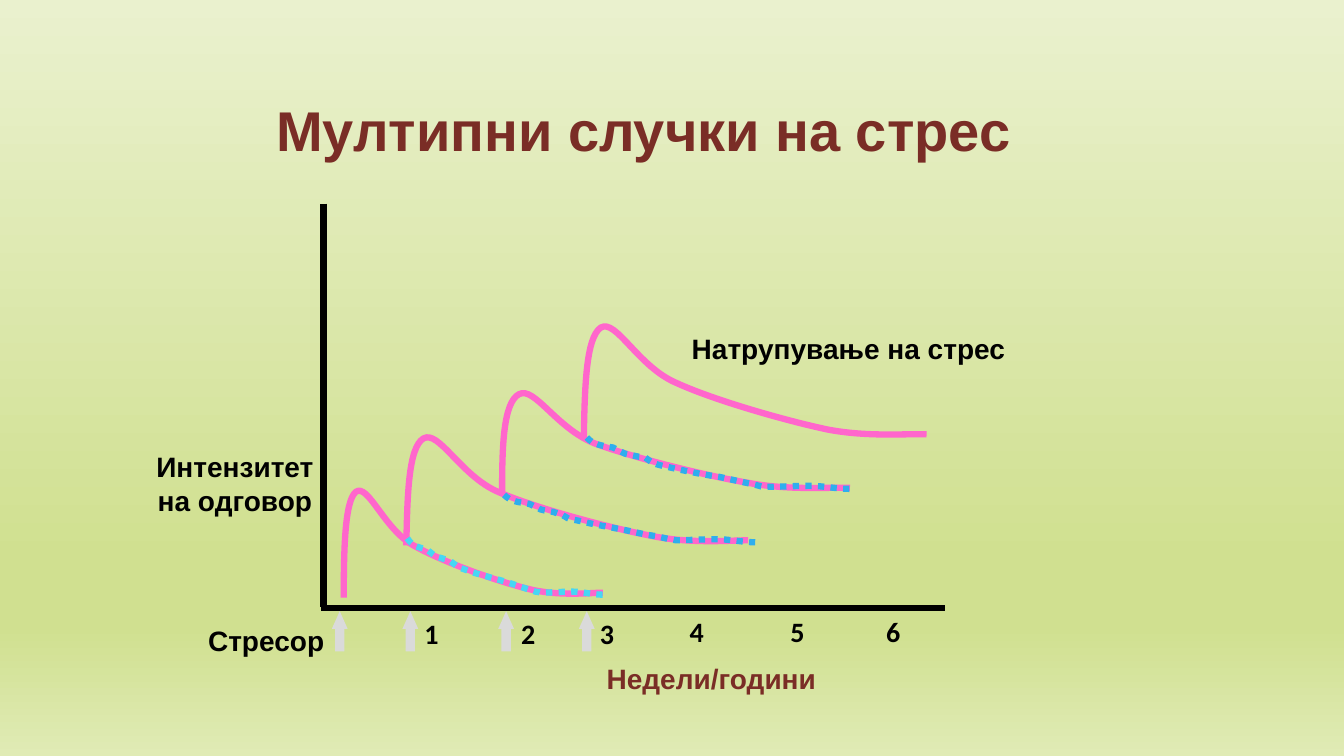
import pptx
import pptx.util
import pptx.dml.color
import pptx.enum.dml
import pptx.enum.shapes
import pptx.enum.text
import pptx.oxml.ns
from lxml import etree

Inches = pptx.util.Inches
qn = pptx.oxml.ns.qn
ALIGN = pptx.enum.text.PP_ALIGN
HUES = {
    "ink": "000000", "brown": "7A2D26", "pink": "FF66CC",
    "cyan": "46D7F4", "blue": "2EAEEE", "green": "03FB61", "gray": "DADADA",
}
SKY = [(0, "EAF1CE"), (74, "D0E090"), (83, "D0E090"), (100, "E0EBB5")]

# Each curve: start point, then two controls and an end for every arc.
WAVES = [
    [(3.41, 5.93), (3.41, 5.45), (3.42, 4.97), (3.53, 4.88),
     (3.65, 4.79), (3.81, 5.25), (4.1, 5.41), (4.38, 5.57), (4.91, 5.76),
     (5.23, 5.84), (5.54, 5.92), (5.86, 5.88), (5.98, 5.88)],
    [(4.03, 5.41), (4.04, 4.92), (4.05, 4.44), (4.2, 4.35),
     (4.35, 4.26), (4.57, 4.72), (4.94, 4.88), (5.31, 5.04), (6.02, 5.23),
     (6.43, 5.31), (6.84, 5.4), (7.25, 5.36), (7.42, 5.36)],
    [(4.98, 4.88), (4.98, 4.44), (4.99, 3.99), (5.15, 3.91),
     (5.3, 3.83), (5.52, 4.25), (5.9, 4.4), (6.28, 4.54), (7, 4.72),
     (7.42, 4.79), (7.84, 4.87), (8.27, 4.83), (8.43, 4.84)],
    [(5.79, 4.36), (5.8, 3.85), (5.81, 3.35), (5.96, 3.25),
     (6.11, 3.16), (6.33, 3.64), (6.71, 3.8), (7.08, 3.97), (7.78, 4.17),
     (8.2, 4.26), (8.61, 4.34), (9.02, 4.3), (9.19, 4.31)],
]
TAILS = [
    ("cyan", [
        (4.04, 5.34), (4.09, 5.42), (4.15, 5.43), (4.23, 5.45),
        (4.35, 5.54), (4.29, 5.51), (4.42, 5.55), (4.44, 5.56), (4.47, 5.57),
        (4.47, 5.57), (4.5, 5.59), (4.52, 5.61), (4.55, 5.63), (4.55, 5.63),
        (4.67, 5.67), (4.69, 5.68), (4.8, 5.71), (4.9, 5.74), (5.01, 5.77),
        (5.08, 5.79), (5.15, 5.82), (5.22, 5.84), (5.25, 5.85), (5.28, 5.86),
        (5.31, 5.87), (5.33, 5.87), (5.36, 5.88), (5.36, 5.88), (5.47, 5.88),
        (5.57, 5.87), (5.68, 5.87), (5.78, 5.87), (5.87, 5.9), (5.98, 5.9)]),
    ("blue", [
        (5, 4.91), (5.07, 4.98), (5.14, 4.98), (5.25, 5),
        (5.4, 5.07), (5.32, 5.05), (5.49, 5.08), (5.51, 5.09), (5.55, 5.1),
        (5.55, 5.1), (5.59, 5.11), (5.62, 5.14), (5.65, 5.15), (5.66, 5.15),
        (5.81, 5.18), (5.84, 5.19), (5.98, 5.22), (6.11, 5.24), (6.25, 5.27),
        (6.34, 5.29), (6.43, 5.31), (6.51, 5.32), (6.55, 5.33), (6.6, 5.34),
        (6.64, 5.35), (6.66, 5.35), (6.7, 5.36), (6.7, 5.36), (6.83, 5.36),
        (6.97, 5.35), (7.11, 5.35), (7.24, 5.35), (7.36, 5.38), (7.49, 5.38)]),
    ("blue", [
        (5.82, 4.34), (5.88, 4.41), (5.96, 4.42), (6.08, 4.44),
        (6.24, 4.52), (6.15, 4.49), (6.33, 4.53), (6.35, 4.53), (6.4, 4.54),
        (6.4, 4.54), (6.43, 4.56), (6.46, 4.59), (6.5, 4.6), (6.51, 4.61),
        (6.66, 4.64), (6.7, 4.65), (6.84, 4.68), (6.98, 4.71), (7.13, 4.73),
        (7.22, 4.75), (7.31, 4.77), (7.4, 4.79), (7.45, 4.8), (7.49, 4.81),
        (7.53, 4.82), (7.55, 4.83), (7.6, 4.83), (7.6, 4.83), (7.74, 4.83),
        (7.89, 4.82), (8.03, 4.82), (8.17, 4.82), (8.29, 4.85), (8.43, 4.85)]),
]


def hue(name):
    return pptx.dml.color.RGBColor.from_string(HUES[name])


def write(frame, text, size=20, font="Arial", color="ink", align=ALIGN.CENTER):
    frame.word_wrap = True
    para = frame.paragraphs[0]
    para.alignment = align
    run = para.add_run()
    run.text = text
    run.font.size = pptx.util.Pt(size)
    run.font.name = font
    run.font.bold = True
    run.font.color.rgb = hue(color)


class Board:
    """Holds the line weight and the slide being drawn."""

    def __init__(self, slide, weight=4.5):
        self.slide = slide
        self.shapes = slide.shapes
        self.weight = pptx.util.Pt(weight)

    def backdrop(self, stops):
        fill = self.slide.background.fill
        fill.gradient()
        fill.gradient_angle = 270
        group = next(self.slide.background._cSld.iter(qn("a:gsLst")))
        for old in list(group):
            group.remove(old)
        for pos, color in stops:
            stop = etree.SubElement(group, qn("a:gs"), pos=str(pos * 1000))
            etree.SubElement(stop, qn("a:srgbClr"), val=color)

    def title(self, text, box, **style):
        shape = self.shapes.title
        shape.left, shape.top, shape.width, shape.height = map(Inches, box)
        shape.text_frame.vertical_anchor = pptx.enum.text.MSO_ANCHOR.MIDDLE
        write(shape.text_frame, text, **style)

    def label(self, text, box, inset=0.1, **style):
        frame = self.shapes.add_textbox(*map(Inches, box)).text_frame
        frame.margin_left = Inches(inset)
        write(frame, text, **style)
        frame.auto_size = pptx.enum.text.MSO_AUTO_SIZE.SHAPE_TO_FIT_TEXT

    def stroke(self, shape, color):
        shape.line.color.rgb = hue(color)
        shape.line.width = self.weight

    def curve(self, points, color, dotted=False):
        """Draw a Bezier outline: a start point, then three points per arc."""
        spots = [(Inches(x), Inches(y)) for x, y in points]
        maker = self.shapes.build_freeform(*spots[0])
        maker.add_line_segments(spots[1:], close=False)
        shape = maker.convert_to_shape()
        shape.shadow.inherit = False
        shape.fill.background()
        self.stroke(shape, color)
        if dotted:
            shape.line.dash_style = pptx.enum.dml.MSO_LINE.ROUND_DOT
        steps = list(shape._element.iter(qn("a:lnTo")))
        for i in range(0, len(steps), 3):
            arc = etree.SubElement(steps[i].getparent(), qn("a:cubicBezTo"))
            for step in steps[i:i + 3]:
                arc.append(step[0])
                step.getparent().remove(step)

    def arrow(self, left):
        kind = pptx.enum.shapes.MSO_SHAPE.UP_ARROW
        box = map(Inches, (left, 6.14, 0.06, 0.29))
        shape = self.shapes.add_shape(kind, *box)
        shape.adjustments[0] = 0.5
        shape.adjustments[1] = 1.12
        shape.shadow.inherit = False
        shape.fill.solid()
        shape.fill.fore_color.rgb = hue("green")
        self.stroke(shape, "gray")
        line = shape._element.spPr.find(qn("a:ln"))
        etree.SubElement(line, qn("a:miter"), lim="800000")

    def axis(self, *ends):
        kind = pptx.enum.shapes.MSO_CONNECTOR.STRAIGHT
        line = self.shapes.add_connector(kind, *map(Inches, ends))
        self.stroke(line, "ink")
        etree.SubElement(line._element.spPr, qn("a:effectLst"))


def main():
    deck = pptx.Presentation()
    deck.slide_width = Inches(13.33)
    deck.slide_height = Inches(7.5)
    board = Board(deck.slides.add_slide(deck.slide_layouts[5]))
    board.backdrop(SKY)
    board.title("Мултипни случки на стрес", (1.88, 0.66, 9, 1.25),
                size=40, color="brown")
    for wave in WAVES:
        board.curve(wave, "pink")
    for color, tail in TAILS:
        board.curve(tail, color, dotted=True)
    for left in (3.34, 4.04, 4.99, 5.79):
        board.arrow(left)
    weeks = (4.11, 5.07, 5.85, 6.74, 7.74, 8.69)
    for week, left in enumerate(weeks, 1):
        top = 6.07 if week <= 3 else 6.05
        board.label(str(week), (left, top, 0.25, 0.43), font="Calibri")
    board.label("Интензитет на одговор", (1.32, 4.41, 2.02, 0.77))
    board.label("Стресор", (1.88, 6.14, 1.52, 0.44))
    board.label("Натрупување на стрес", (6.59, 3.24, 3.61, 0.44),
                inset=0.27, align=ALIGN.LEFT)
    board.label("Недели/години", (5.68, 6.51, 2.75, 0.44), color="brown")
    board.axis(3.21, 2.02, 3.21, 6.02)
    board.axis(3.18, 6.03, 9.37, 6.03)
    deck.save("out.pptx")


if __name__ == "__main__":
    main()
